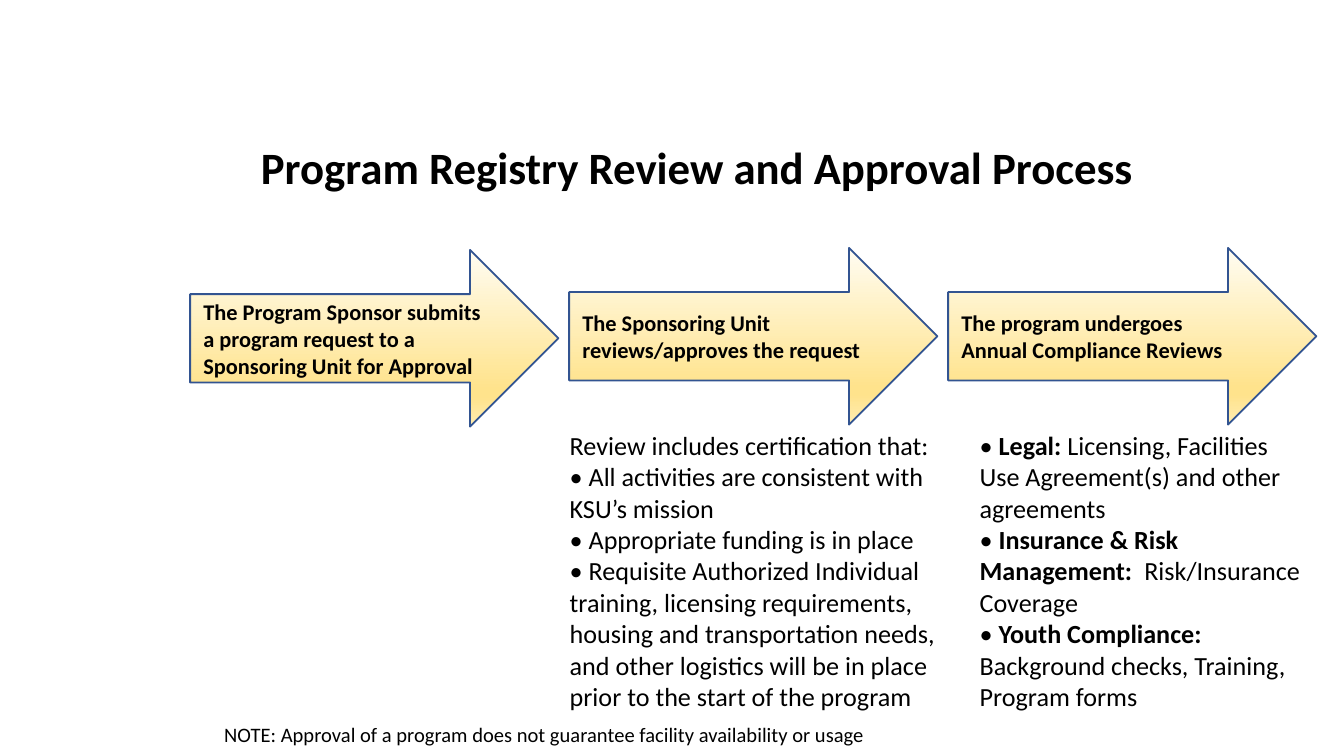
import pptx
import pptx.util
import pptx.dml.color
import pptx.enum.shapes
import pptx.enum.text
import pptx.oxml
import pptx.oxml.ns

RGB = pptx.dml.color.RGBColor
ALIGN = pptx.enum.text.PP_ALIGN
ANCHOR = pptx.enum.text.MSO_ANCHOR
FIT = pptx.enum.text.MSO_AUTO_SIZE

PX = 4572  # EMU in one px, 200 px to the inch
BLACK = RGB(0x00, 0x00, 0x00)
WHITE = RGB(0xFF, 0xFF, 0xFF)
BLUE = RGB(0x32, 0x54, 0x91)
CREAM = RGB(0xFF, 0xFC, 0xF2)
GOLD = RGB(0xFF, 0xE3, 0x8C)
PALE = RGB(0xFF, 0xEC, 0xB2)
STOPS = [(0, CREAM), (79, GOLD), (83, GOLD), (100, PALE)]

# Each paragraph is a list of (text, bold) runs.
TITLE = [[("Program Registry Review and Approval Process", True)]]
NOTE = [[("NOTE: Approval of a program does not guarantee facility "
          "availability or usage", False)]]
STEPS = [
    (372, ["The Program Sponsor submits", "a program request to a",
           "Sponsoring Unit for Approval"]),
    (369, ["The Sponsoring Unit", "reviews/approves the request"]),
    (369, ["The program undergoes", "Annual Compliance Reviews"]),
]
CHECKS = [
    "Review includes certification that:",
    "• All activities are consistent with KSU’s mission",
    "• Appropriate funding is in place",
    "• Requisite Authorized Individual training, licensing requirements, "
    "housing and transportation needs, and other logistics will be in place "
    "prior to the start of the program",
]
REVIEWS = [
    ("Legal: ", "Licensing, Facilities Use Agreement(s) and other agreements"),
    ("Insurance & Risk Management:  ", "Risk/Insurance Coverage"),
    ("Youth Compliance: ", "Background checks, Training, Program forms"),
]


def scale(box):
    return [pptx.util.Emu(n * PX) for n in box]


def write(frame, paras, size, align=ALIGN.LEFT):
    """Fill a text frame with paragraphs of (text, bold) runs."""
    for i, runs in enumerate(paras):
        para = frame.paragraphs[0] if i == 0 else frame.add_paragraph()
        para.alignment = align
        for text, bold in runs:
            run = para.add_run()
            run.text = text
            look = {"name": "Calibri", "size": pptx.util.Pt(size), "bold": bold}
            for key, value in look.items():
                setattr(run.font, key, value)
            run.font.color.rgb = BLACK


def shade(shape):
    """Give a shape the four-stop vertical gradient."""
    shape.fill.gradient()
    shape.fill.gradient_angle = 270
    stops = next(shape._element.spPr.iter(pptx.oxml.ns.qn("a:gsLst")))
    for old in list(stops):
        stops.remove(old)
    for place, color in STOPS:
        stops.append(pptx.oxml.parse_xml(
            f'<a:gs {pptx.oxml.ns.nsdecls("a")} pos="{place * 1000}">'
            f'<a:srgbClr val="{color}"/></a:gs>'))


def add_arrow(slide, box, lines):
    kind = pptx.enum.shapes.MSO_SHAPE.RIGHT_ARROW
    arrow = slide.shapes.add_shape(kind, *scale(box))
    arrow.shadow.inherit = False
    shade(arrow)
    arrow.line.color.rgb = BLUE
    arrow.line.width = pptx.util.Pt(1)
    arrow.text_frame.vertical_anchor = ANCHOR.MIDDLE
    write(arrow.text_frame, [[(line, True)] for line in lines], 12)


def add_text(slide, box, paras, size, align=ALIGN.LEFT):
    frame = slide.shapes.add_textbox(*scale(box)).text_frame
    frame.word_wrap = True
    frame.auto_size = FIT.SHAPE_TO_FIT_TEXT
    write(frame, paras, size, align)


def main():
    deck = pptx.Presentation()
    deck.slide_width, deck.slide_height = scale((2000, 1125))
    slide = deck.slides.add_slide(deck.slide_layouts[6])
    slide.background.fill.solid()
    slide.background.fill.fore_color.rgb = WHITE

    for i, (top, lines) in enumerate(STEPS):
        add_arrow(slide, (283 + 564 * i, top, 548, 263), lines)

    add_text(slide, (300, 198, 1474, 100), TITLE, 24, ALIGN.CENTER)
    checks = [[(text, False)] for text in CHECKS]
    add_text(slide, (828, 629, 650, 444), checks, 14)
    reviews = [[("• ", False), (head, True), (body, False)]
               for head, body in REVIEWS]
    add_text(slide, (1438, 629, 524, 444), reviews, 14)
    add_text(slide, (314, 1064, 1000, 58), NOTE, 11)
    deck.save("out.pptx")


if __name__ == "__main__":
    main()
